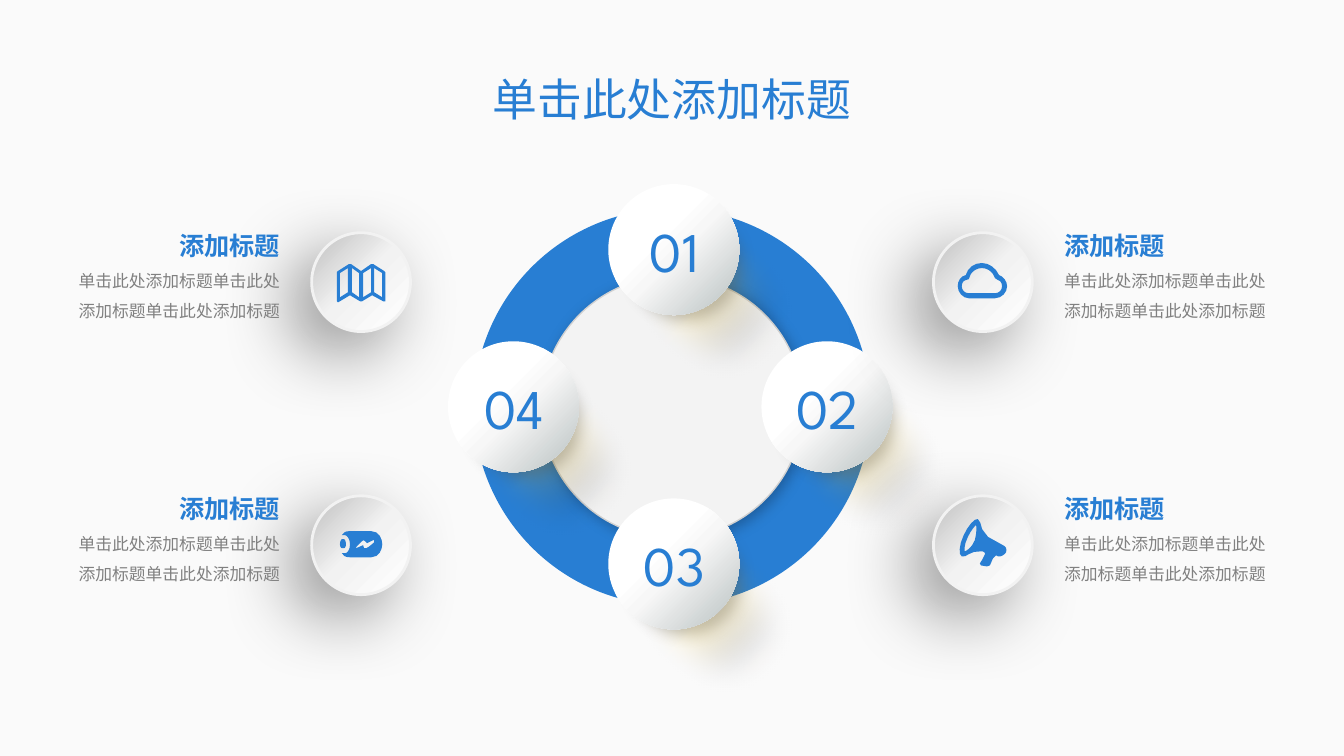
from dataclasses import dataclass

from lxml import etree
from pptx import Presentation
from pptx import util as u
from pptx.dml import color
from pptx.enum import shapes, text
from pptx.oxml import ns


@dataclass(frozen=True)
class Theme:
    background: str = "FAFAFA"
    accent: str = "287ED3"
    body: str = "808080"
    hub: str = "F3F3F3"
    hub_line: str = "D1D1D1"
    button_line: str = "F2F2F2"
    latin: str = "League Spartan"
    chinese: str = "Noto Sans CJK SC"
    title_size: int = 32
    number_size: int = 40
    heading_size: int = 18
    body_size: int = 12


THEME = Theme()

# Gradients: angle, then (position, colour, opacity) in percent
GLOW = (90, [(0, "FFC400", 100), (17, "000000", 46), (34, "000000", 43), (51, "FFC400", 20),
             (65, "000000", 10), (78, "FFC400", 5), (100, "FFC400", 0)])
BASE_SHEEN = (45, [(0, "FFFFFF", 100), (43, "F7F7F7", 100), (100, "B8C0C0", 100)])
BADGE_SHEEN = (45, [(11, "FFFFFF", 100), (39, "FFFFFF", 100), (53, "F7F7F7", 100),
                    (100, "B8C0C0", 100)])
BUTTON_SHEEN = (225, [(0, "FFFFFF", 100), (51, "F2F2F2", 100), (100, "BFBFBF", 100)])

# Shadows: colour, opacity, blur, distance, angle
HUB_SHADOW = ("000000", 25, 10, 3, 45)
BADGE_SHADOW = ("494949", 30, 11, 7, 45)
BUTTON_SHADOW = ("000000", 41, 53, 21, 135)
GLOW_SOFTNESS = 25

# Outlines: contours of points (2 numbers) and Bezier curves (6 numbers)
PETAL = [[(-2.23, 0), (-1.95, -1.61, -1.22, -2.96, 0, -2.96), (1.22, -2.96, 2.04, -1.58, 2.23, 0),
          (2.45, 1.64, 1.22, 2.96, 0, 2.96), (-1.22, 2.96, -2.5, 1.62, -2.23, 0)]]
CLOUD = [
    [(-14, 16), (12, 16), (19, 16, 24, 10, 24, 4), (24, -1, 20, -6, 16, -7),
     (13, -14, 6, -19, -1, -19), (-9, -19, -15, -14, -17, -7), (-22, -6, -25, -1, -25, 4),
     (-25, 10, -20, 16, -14, 16)],
    [(-19, -1), (-17, -2), (-14, -3), (-12, -8), (-10, -11, -6, -14, -1, -14),
     (4, -14, 8, -11, 10, -8), (12, -4), (15, -2), (17, -1), (18, 0, 19, 2, 19, 4),
     (19, 8, 16, 11, 12, 11), (-14, 11), (-18, 11, -21, 8, -21, 4), (-21, 2, -20, 0, -19, -1)],
]
MAP = [
    [(-24, -10), (-23, -11), (-12, -18), (-10, -18), (0, -11), (10, -18), (12, -18), (23, -11),
     (24, -10), (24, 19), (22, 19), (11, 13), (1, 19), (-1, 19), (-11, 13), (-21, 19),
     (-23, 20), (-24, 19)],
    [(13, 10), (21, 15), (21, -9), (13, -14)],
    [(2, 15), (10, 10), (10, -14), (2, -9)],
    [(-9, 10), (-2, 15), (-2, -9), (-9, -14)],
    [(-21, 15), (-13, 10), (-13, -14), (-21, -9)],
]
BATTERY = [
    [(-11, -1), (-11, -6, -14, -10, -16, -10), (-19, -10), (-17, -12, -17, -14, -11, -14),
     (10, -14), (18, -14, 21, -6, 21, -1), (21, 4, 18, 12, 10, 12), (-11, 12),
     (-17, 12, -17, 10, -19, 8), (-16, 8), (-14, 8, -11, 5, -11, -1)],
    [(-5, 3), (2, 0), (3, 3), (5, 3), (8, 2, 13, -3, 13, -3), (13, -5), (12, -5),
     (6, -2), (4, -4), (2, -5), (1, -4, -5, 2, -5, 2)],
    [(-19, -6), (-17, -6), (-16, -6, -15, -3, -15, -1), (-15, 1, -16, 3, -17, 3), (-19, 3),
     (-20, 3, -21, 1, -21, -1), (-21, -3, -20, -6, -19, -6)],
]
MEGAPHONE = [
    [(-19, -10), (-15, -19, -8, -27, -5, -26), (1, -23, -8, -11, 20, 0), (23, 1, 24, 4, 23, 7),
     (22, 9, 18, 12, 15, 11), (13, 10), (10, 13), (7, 20), (4, 21), (-2, 20), (-3, 18),
     (-1, 15), (2, 9), (3, 8, 1, 6, -1, 6), (-14, 5, -16, 13, -21, 11),
     (-24, 10, -24, 0, -19, -10)],
    [(-18, 6), (-17, 6, -11, 3, -8, -5), (-6, -12, -6, -20, -7, -20),
     (-7, -20, -12, -15, -15, -8), (-19, 0, -18, 5, -18, 6)],
]
ICON_UNIT = 0.0254  # centimetres per icon grid step

BADGES = [("01", 16.98, 6.29), ("04", 12.94, 10.25), ("02", 20.84, 10.25), ("03", 16.98, 14.21)]
LEFT, RIGHT = text.PP_ALIGN.LEFT, text.PP_ALIGN.RIGHT
ITEMS = [  # icon, button centre, text left, text width, alignment
    (CLOUD, 24.77, 7.11, 26.57, 5.82, LEFT),
    (BATTERY, 9.1, 13.74, 1.54, 5.77, RIGHT),
    (MEGAPHONE, 24.77, 13.74, 26.57, 5.82, LEFT),
    (MAP, 9.1, 7.11, 1.54, 5.77, RIGHT),
]


def rgb(value):
    return color.RGBColor.from_string(value)


def add_colour(parent, value, opacity):
    element = etree.SubElement(parent, ns.qn("a:srgbClr"), val=value)
    if opacity < 100:
        etree.SubElement(element, ns.qn("a:alpha"), val=str(opacity * 1000))


def paint(shape, fill, line=None, shadow=None, softness=0):
    """Fill with a colour or a gradient; set the outline and the effects."""
    if isinstance(fill, str):
        shape.fill.solid()
        shape.fill.fore_color.rgb = rgb(fill)
    else:
        angle, stops = fill
        shape.fill.gradient()
        gradient = shape.element.spPr.find(ns.qn("a:gradFill"))
        stop_list = gradient.find(ns.qn("a:gsLst"))
        stop_list[:] = []
        for position, value, opacity in stops:
            stop = etree.SubElement(stop_list, ns.qn("a:gs"), pos=str(position * 1000))
            add_colour(stop, value, opacity)
        gradient.find(ns.qn("a:lin")).set("ang", str(angle * 60000))
    if line:
        shape.line.color.rgb, shape.line.width = rgb(line[0]), u.Pt(line[1])
    else:
        shape.line.fill.background()
    shape.shadow.inherit = False
    effects = shape.element.spPr.find(ns.qn("a:effectLst"))
    if shadow:
        value, opacity, blur, distance, angle = shadow
        outer = etree.SubElement(effects, ns.qn("a:outerShdw"), blurRad=str(u.Pt(blur)),
                                 dist=str(u.Pt(distance)), dir=str(angle * 60000),
                                 algn="ctr", rotWithShape="0")
        add_colour(outer, value, opacity)
    if softness:
        etree.SubElement(effects, ns.qn("a:softEdge"), rad=str(u.Pt(softness)))


def add_circle(slide, x, y, size, fill, **style):
    shape = slide.shapes.add_shape(shapes.MSO_SHAPE.OVAL, u.Cm(x - size / 2), u.Cm(y - size / 2),
                                   u.Cm(size), u.Cm(size))
    paint(shape, fill, **style)


def flatten(contour, steps=4):
    """Turn points and Bezier curves into a list of points."""
    points = [contour[0]]
    for segment in contour[1:]:
        if len(segment) == 2:
            points.append(segment)
            continue
        corners = [points[-1], segment[:2], segment[2:4], segment[4:]]
        for t in (step / steps for step in range(1, steps + 1)):
            weights = ((1 - t) ** 3, 3 * t * (1 - t) ** 2, 3 * t * t * (1 - t), t ** 3)
            points.append(tuple(sum(w * c[axis] for w, c in zip(weights, corners))
                                for axis in (0, 1)))
    return points


def add_outline(slide, contours, x, y, unit, fill, rotation=0, **style):
    builder = None
    for contour in contours:
        points = [(u.Cm(x + px * unit), u.Cm(y + py * unit)) for px, py in flatten(contour)]
        if builder is None:
            builder = slide.shapes.build_freeform(*points[0], scale=1.0)
        else:
            builder.move_to(*points[0])
        builder.add_line_segments(points[1:], close=True)
    shape = builder.convert_to_shape()
    shape.rotation = rotation
    paint(shape, fill, **style)


def add_text(slide, box, lines, align, wrap=True, spacing=None, latin=THEME.latin):
    """Each line is (wording, size, colour, bold)."""
    frame = slide.shapes.add_textbox(*map(u.Cm, box)).text_frame
    frame.word_wrap = wrap
    frame.auto_size = text.MSO_AUTO_SIZE.SHAPE_TO_FIT_TEXT
    for index, (wording, size, colour, bold) in enumerate(lines):
        paragraph = frame.add_paragraph() if index else frame.paragraphs[0]
        paragraph.alignment, paragraph.line_spacing = align, spacing
        run = paragraph.add_run()
        run.text = wording
        for name, value in {"size": u.Pt(size), "bold": bold, "name": latin}.items():
            setattr(run.font, name, value)
        run.font.color.rgb = rgb(colour)
        etree.SubElement(run.font._element, ns.qn("a:ea"), typeface=THEME.chinese)


def add_badge(slide, number, x, y):
    add_outline(slide, PETAL, x + 0.86, y + 1.12, 1, GLOW, rotation=315, softness=GLOW_SOFTNESS)
    add_circle(slide, x + 0.13, y + 0.2, 2.77, BASE_SHEEN, shadow=BADGE_SHADOW)
    add_circle(slide, x, y, 3.3, BADGE_SHEEN)
    add_text(slide, (x - 1.42, y - 0.97, 2.87, 1.96),
             [(number, THEME.number_size, THEME.accent, False)], text.PP_ALIGN.CENTER)


def add_item(slide, icon, x, y, text_left, text_width, align):
    add_circle(slide, x, y, 2.49, BUTTON_SHEEN, line=(THEME.button_line, 2), shadow=BUTTON_SHADOW)
    add_outline(slide, icon, x, y, ICON_UNIT, THEME.accent)
    add_text(slide, (text_left, y - 1.82, text_width, 2.95),
             [("添加标题", THEME.heading_size, THEME.accent, True),
              ("单击此处添加标题" * 3, THEME.body_size, THEME.body, False)], align, spacing=1.5)


def main():
    presentation = Presentation()
    presentation.slide_width, presentation.slide_height = u.Cm(33.87), u.Cm(19.05)
    slide = presentation.slides.add_slide(presentation.slide_layouts[6])
    slide.background.fill.solid()
    slide.background.fill.fore_color.rgb = rgb(THEME.background)

    # Title
    add_text(slide, (12.12, 1.68, 9.63, 1.63),
             [("单击此处添加标题", THEME.title_size, THEME.accent, False)],
             text.PP_ALIGN.CENTER, wrap=False, latin=THEME.chinese)

    # Ring with its numbered badges
    add_circle(slide, 16.94, 10.26, 10, THEME.accent)
    add_circle(slide, 16.94, 10.26, 6.6, THEME.hub, line=(THEME.hub_line, 1), shadow=HUB_SHADOW)
    for badge in BADGES:
        add_badge(slide, *badge)

    # Icon buttons with their texts
    for item in ITEMS:
        add_item(slide, *item)

    presentation.save("out.pptx")


if __name__ == "__main__":
    main()
